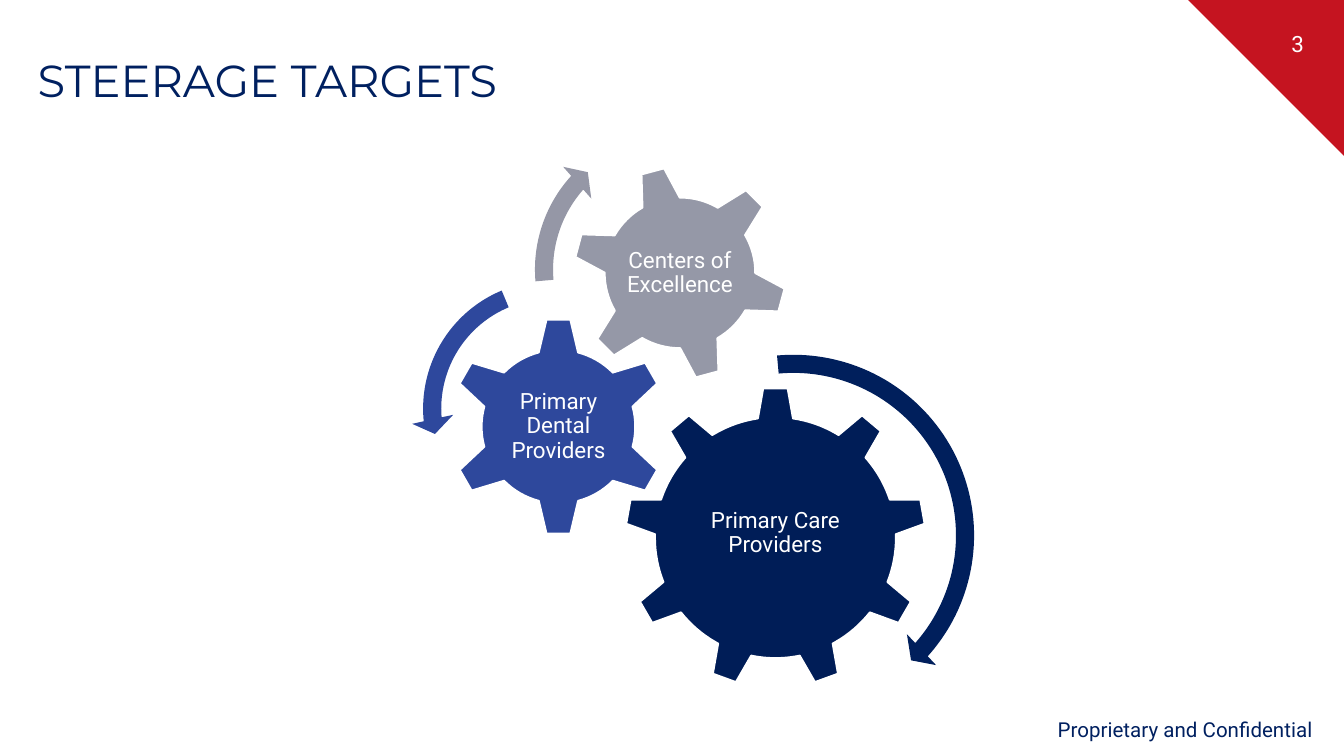
from pptx import Presentation
from pptx.dml.color import RGBColor
from pptx.enum.shapes import MSO_SHAPE as Shape
from pptx.enum.text import MSO_ANCHOR as Anchor, PP_ALIGN as Align
from pptx.util import Pt

NAVY, WHITE, RED = "002060", "FFFFFF", "C51420"


def color(value):
    return RGBColor.from_string(value)


class SlideBuilder:
    heading_font = "Montserrat"
    body_font = "Roboto"

    def __init__(self, slide):
        self.slide = slide

    def set_text(self, holder, text, size, ink, font, align, anchor, spacing, inset):
        frame = holder.text_frame
        frame.text = text
        frame.word_wrap = True
        frame.vertical_anchor = anchor
        frame.margin_left = frame.margin_right = Pt(inset)
        frame.margin_top = frame.margin_bottom = Pt(inset)
        paragraph = frame.paragraphs[0]
        paragraph.alignment = align
        paragraph.line_spacing = spacing
        paragraph.space_before = Pt(0)
        run = paragraph.runs[0]
        run.font.name = font
        run.font.size = Pt(size)
        run.font.color.rgb = color(ink)

    def title(self, text, left, top, width, height):
        heading = self.slide.shapes.title
        heading.left, heading.top = Pt(left), Pt(top)
        heading.width, heading.height = Pt(width), Pt(height)
        self.set_text(heading, text, 24, NAVY, self.heading_font,
                      Align.LEFT, Anchor.MIDDLE, 0.9, 0)

    def label(self, text, left, top, width, height, size=12, ink=WHITE,
              align=Align.CENTER, anchor=Anchor.MIDDLE, spacing=0.9, inset=1.2):
        box = self.slide.shapes.add_textbox(Pt(left), Pt(top), Pt(width), Pt(height))
        self.set_text(box, text, size, ink, self.body_font, align, anchor, spacing, inset)

    def square_shape(self, kind, left, top, side, fill, rotation=0, outline=None):
        shape = self.slide.shapes.add_shape(kind, Pt(left), Pt(top), Pt(side), Pt(side))
        shape.shadow.inherit = False
        shape.rotation = rotation
        shape.fill.solid()
        shape.fill.fore_color.rgb = color(fill)
        if outline:
            shape.line.color.rgb = color(outline)
            shape.line.width = Pt(1)
        else:
            shape.line.fill.background()
        return shape

    def gear(self, kind, left, top, side, fill, rotation, text, text_width, text_height, text_drop):
        self.square_shape(kind, left, top, side, fill, rotation, WHITE)
        self.label(text, left + (side - text_width) / 2,
                   top + (side - text_height) / 2 + text_drop, text_width, text_height)

    def turn_arrow(self, kind, left, top, side, fill, adjustments):
        arrow = self.square_shape(kind, left, top, side, fill)
        for index, value in enumerate(adjustments):
            arrow.adjustments[index] = value


GEARS = [
    (Shape.GEAR_9, 334.8, 207.4, 161.3, "001D57", 0, "Primary Care Providers", 96.5, 82.8, -2.3),
    (Shape.GEAR_6, 240.5, 169.9, 117.4, "2E489C", 0, "Primary Dental Providers", 58.3, 57.6, 0),
    (Shape.GEAR_6, 306.7, 88.6, 115.2, "9598A7", 345, "Centers of Excellence", 64.8, 64.8, 0),
]
TURNS = [
    (Shape.CIRCULAR_ARROW, 321.8, 183.6, 206.6, "001F5C",
     (0.047, 2.99, 25.039, 158.879, 0.055)),
    (Shape.LEFT_CIRCULAR_ARROW, 220.3, 144, 149.8, "2E489D",
     (0.065, 4.3, 104.891, 148.378, 0.075)),
    (Shape.CIRCULAR_ARROW, 280.1, 63.4, 162, "9597A6",
     (0.06, 3.941, 133.138, 105.082, 0.07)),
]


def main():
    deck = Presentation()
    deck.slide_width, deck.slide_height = Pt(720), Pt(405)
    builder = SlideBuilder(deck.slides.add_slide(deck.slide_layouts[5]))
    builder.title("STEERAGE TARGETS", 20.2, 31.7, 622, 25.2)
    builder.square_shape(Shape.RIGHT_TRIANGLE, 636.5, 0, 83.5, RED, 180)
    builder.label("3", 670.3, 0, 49.7, 46.8, spacing=1)
    builder.label("Proprietary and Confidential", 566.6, 381.6, 145.4, 18, size=11,
                  ink=NAVY, align=Align.LEFT, anchor=Anchor.TOP, spacing=1.2, inset=0)
    for gear in GEARS:
        builder.gear(*gear)
    for turn in TURNS:
        builder.turn_arrow(*turn)
    deck.save("out.pptx")


if __name__ == "__main__":
    main()
